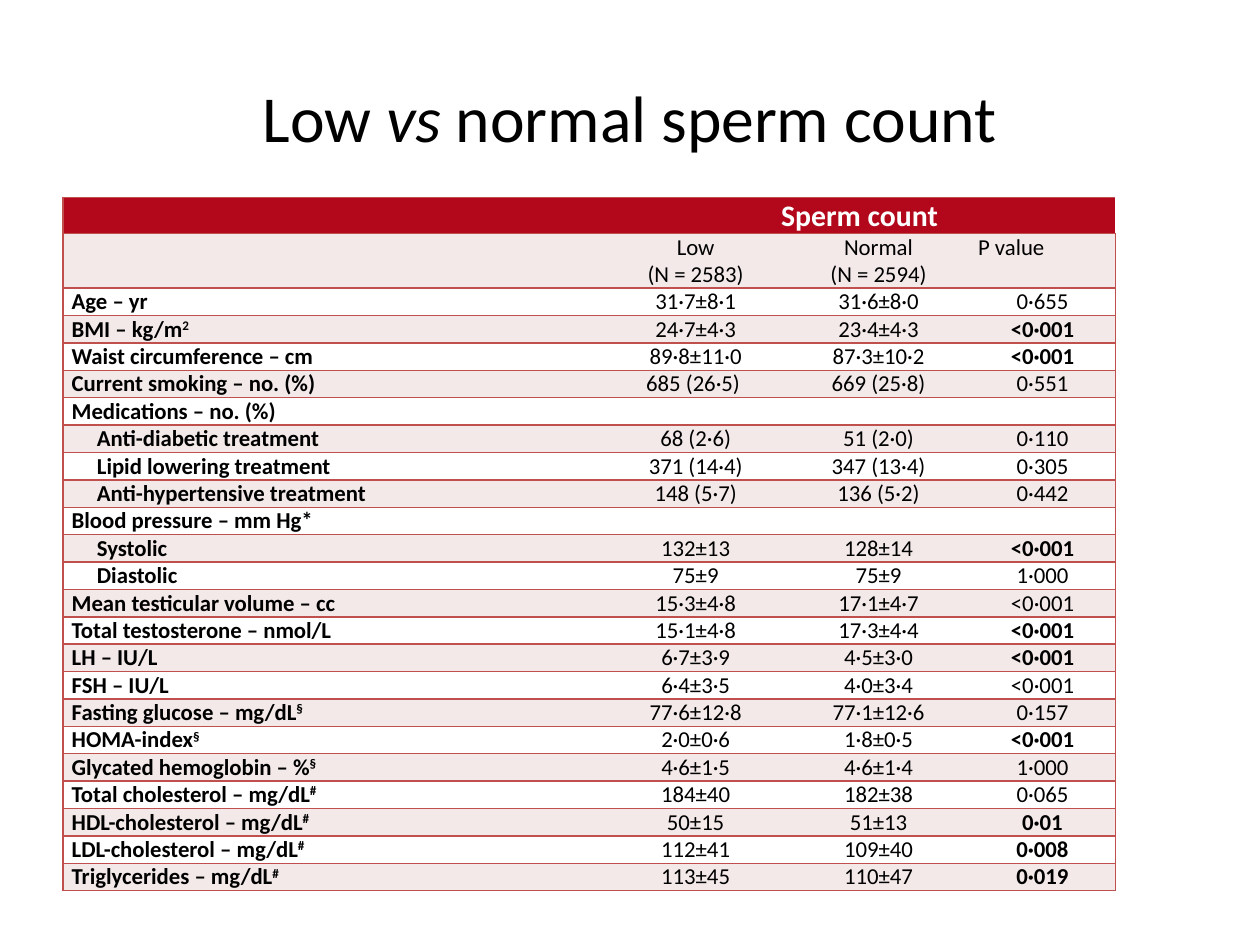
"""Build a slide with a table comparing men with low and normal sperm counts."""
import pptx
import pptx.dml.color
import pptx.enum.text
import pptx.oxml
import pptx.oxml.ns
import pptx.util

Pt = pptx.util.Pt
ALIGN = pptx.enum.text.PP_ALIGN
ANCHOR = pptx.enum.text.MSO_ANCHOR

FONT = "Calibri"
RED, BORDER, PINK, WHITE, BLACK = "B3071B", "C0504D", "F4E9E9", "FFFFFF", "000000"
TITLE = [("Low ", False), ("vs", True), (" normal sperm count", False)]
GROUPS = ["Low\n(N = 2583)", "Normal\n(N = 2594)", "P value"]
INDENTED = {"Anti-diabetic treatment", "Lipid lowering treatment",
            "Anti-hypertensive treatment", "Systolic", "Diastolic"}
MEASURES = [
    ("Age – yr", "", "31·7±8·1", "31·6±8·0", "0·655", False),
    ("BMI – kg/m", "2", "24·7±4·3", "23·4±4·3", "<0·001", True),
    ("Waist circumference – cm", "", "89·8±11·0", "87·3±10·2", "<0·001", True),
    ("Current smoking – no. (%)", "", "685 (26·5) ", "669 (25·8)", "0·551", False),
    ("Medications – no. (%)", "", "", "", "", False),
    ("Anti-diabetic treatment", "", "68 (2·6)", "51 (2·0)", "0·110", False),
    ("Lipid lowering treatment", "", "371 (14·4)", "347 (13·4)", "0·305", False),
    ("Anti-hypertensive treatment", "", "148 (5·7)", "136 (5·2)", "0·442", False),
    ("Blood pressure – mm Hg*", "", "", "", "", False),
    ("Systolic", "", "132±13", "128±14", "<0·001", True),
    ("Diastolic", "", "75±9", "75±9", "1·000", False),
    ("Mean testicular volume – cc", "", "15·3±4·8", "17·1±4·7", "<0·001", False),
    ("Total testosterone – nmol/L", "", "15·1±4·8", "17·3±4·4", "<0·001", True),
    ("LH – IU/L", "", "6·7±3·9", "4·5±3·0", "<0·001", True),
    ("FSH – IU/L", "", "6·4±3·5", "4·0±3·4", "<0·001", False),
    ("Fasting glucose – mg/dL", "§", "77·6±12·8", "77·1±12·6", "0·157", False),
    ("HOMA-index", "§", "2·0±0·6", "1·8±0·5", "<0·001", True),
    ("Glycated hemoglobin – %", "§", "4·6±1·5", "4·6±1·4", "1·000", False),
    ("Total cholesterol – mg/dL", "#", "184±40", "182±38", "0·065", False),
    ("HDL-cholesterol – mg/dL", "#", "50±15", "51±13", "0·01", True),
    ("LDL-cholesterol – mg/dL", "#", "112±41", "109±40", "0·008", True),
    ("Triglycerides – mg/dL", "#", "113±45", "110±47", "0·019", True),
]
LEFT, TOP = 36, 113
COLUMN_WIDTHS = [309, 105, 104, 83.5]
ROW_HEIGHTS = [20, 31] + [15.6] * len(MEASURES)


def rgb(value):
    return pptx.dml.color.RGBColor.from_string(value)


def set_font(font, size, color, bold=False):
    font.name, font.size, font.bold = FONT, Pt(size), bold
    font.color.rgb = rgb(color)


def set_border(cell, side, color=None):
    line = pptx.oxml.parse_xml(
        f'<a:{side} {pptx.oxml.ns.nsdecls("a")} w="12700">'
        + (f'<a:solidFill><a:srgbClr val="{color}"/></a:solidFill>' if color else "<a:noFill/>")
        + f"</a:{side}>")
    cell._tc.get_or_add_tcPr().append(line)


def style_cell(cell, row, column):
    cell.margin_left = cell.margin_right = Pt(5)
    cell.margin_top = cell.margin_bottom = 0
    set_border(cell, "lnL", BORDER if column == 0 else None)
    set_border(cell, "lnR", BORDER if column == 3 else None)
    set_border(cell, "lnT", BORDER)
    set_border(cell, "lnB", BORDER)
    cell.fill.solid()
    cell.fill.fore_color.rgb = rgb(RED if row == 0 else PINK if row % 2 else WHITE)
    cell.text_frame.paragraphs[0]._p.get_or_add_endParaRPr().set("sz", "1300")


def write(cell, text, size=13, color=BLACK, bold=False, align=ALIGN.CENTER):
    for index, line in enumerate(text.split("\n") if text else []):
        frame = cell.text_frame
        paragraph = frame.add_paragraph() if index else frame.paragraphs[0]
        paragraph.alignment = align
        set_font(paragraph.font, size, color, bold)
        paragraph.add_run().text = line


def write_label(cell, label, superscript):
    write(cell, label, bold=True, align=ALIGN.LEFT)
    paragraph = cell.text_frame.paragraphs[0]
    if label in INDENTED:
        paragraph._p.get_or_add_pPr().set("marL", str(Pt(14.4)))
    if superscript:
        run = paragraph.add_run()
        run.text = superscript
        run._r.get_or_add_rPr().set("baseline", "30000")


def add_title(slide):
    frame = slide.shapes.add_textbox(Pt(36), Pt(21.6), Pt(648), Pt(90)).text_frame
    frame.word_wrap = True
    frame.vertical_anchor = ANCHOR.MIDDLE
    paragraph = frame.paragraphs[0]
    paragraph.alignment = ALIGN.CENTER
    set_font(paragraph.font, 37.5, BLACK)
    for text, italic in TITLE:
        run = paragraph.add_run()
        run.text = text
        run.font.italic = italic


def add_measures(slide):
    table = slide.shapes.add_table(
        len(ROW_HEIGHTS), len(COLUMN_WIDTHS), Pt(LEFT), Pt(TOP),
        Pt(sum(COLUMN_WIDTHS)), Pt(sum(ROW_HEIGHTS))).table
    table.first_row = table.horz_banding = False
    for column, width in zip(table.columns, COLUMN_WIDTHS):
        column.width = Pt(width)
    for row, height in zip(table.rows, ROW_HEIGHTS):
        row.height = Pt(height)
    for row in range(len(ROW_HEIGHTS)):
        for column in range(len(COLUMN_WIDTHS)):
            style_cell(table.cell(row, column), row, column)
    table.cell(0, 1).merge(table.cell(0, 3))
    set_border_right = table.cell(0, 1)._tc.tcPr.find(pptx.oxml.ns.qn("a:lnR"))
    table.cell(0, 1)._tc.tcPr.remove(set_border_right)
    write(table.cell(0, 1), "Sperm count", 17, WHITE, True)
    for column, group in enumerate(GROUPS, 1):
        write(table.cell(1, column), group, align=ALIGN.LEFT if column == 3 else ALIGN.CENTER)
    for row, (label, superscript, low, normal, p_value, bold) in enumerate(MEASURES, 2):
        write_label(table.cell(row, 0), label, superscript)
        write(table.cell(row, 1), low)
        write(table.cell(row, 2), normal)
        write(table.cell(row, 3), p_value, bold=bold)


def main():
    presentation = pptx.Presentation()
    presentation.slide_width, presentation.slide_height = Pt(720), Pt(540)
    slide = presentation.slides.add_slide(presentation.slide_layouts[6])
    add_title(slide)
    add_measures(slide)
    presentation.save("out.pptx")


if __name__ == "__main__":
    main()
